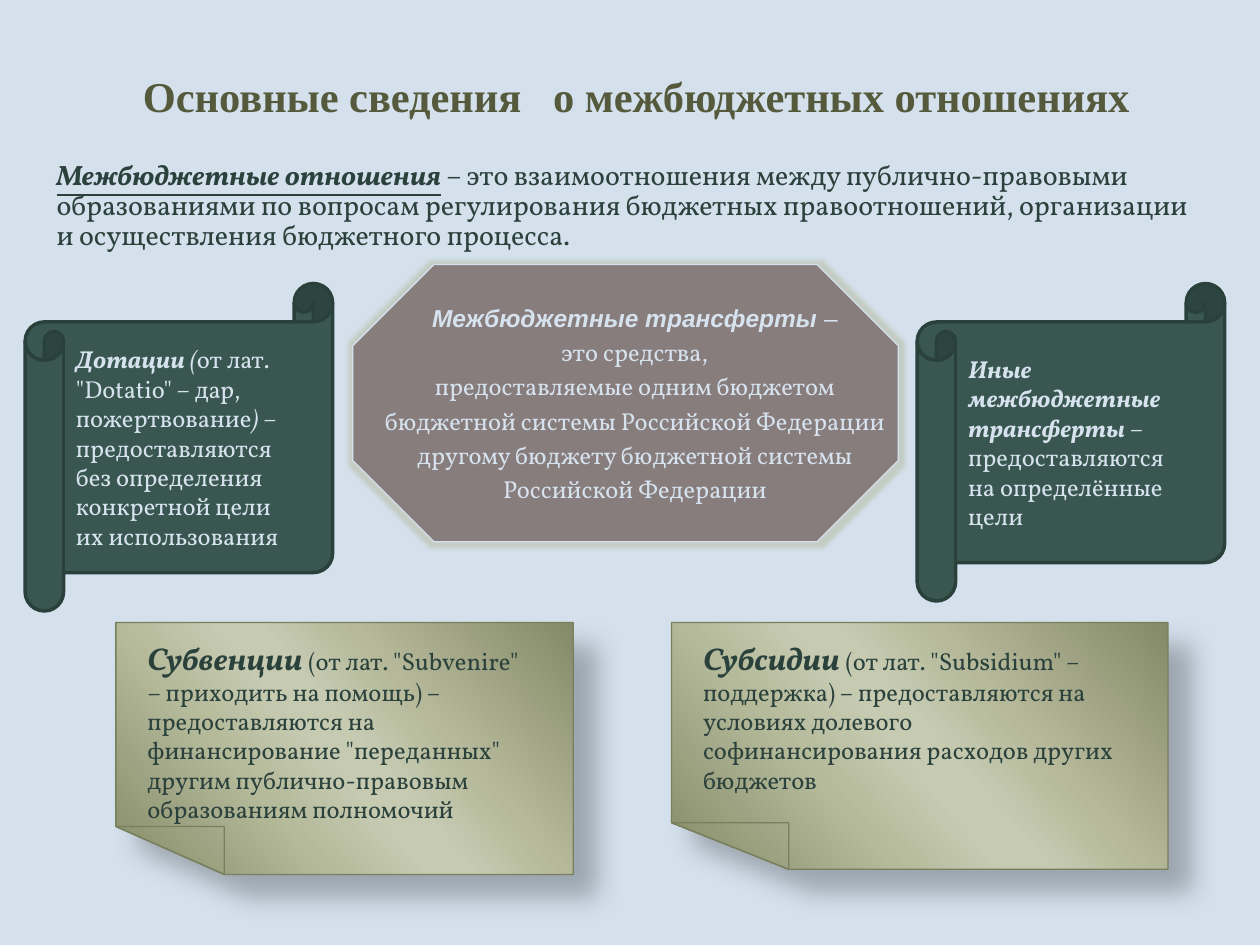
from lxml import etree
from pptx import Presentation
from pptx.dml.color import RGBColor
from pptx.enum.shapes import MSO_SHAPE
from pptx.enum.text import MSO_ANCHOR, PP_ALIGN
from pptx.oxml import parse_xml
from pptx.oxml.ns import nsdecls, qn
from pptx.util import Inches, Pt

OCTAGON = MSO_SHAPE.OCTAGON
SCROLL = MSO_SHAPE.HORIZONTAL_SCROLL
MIDDLE, TOP = MSO_ANCHOR.MIDDLE, MSO_ANCHOR.TOP
CENTER, LEFT = PP_ALIGN.CENTER, PP_ALIGN.LEFT

SKY = RGBColor(0xD4, 0xE1, 0xED)
PALE = RGBColor(0xD6, 0xE2, 0xEE)
OLIVE = RGBColor(0x56, 0x5A, 0x3C)
INK = RGBColor(0x2B, 0x41, 0x3C)
TAUPE = RGBColor(0x88, 0x7D, 0x7D)
GREEN = RGBColor(0x39, 0x57, 0x50)
DARK_GREEN = RGBColor(0x2A, 0x40, 0x3B)
NOTE_EDGE = RGBColor(0x79, 0x7E, 0x5C)
NOTE_STOPS = [(0, "848967"), (33, "B5B99A"), (47, "C6CAB1"),
              (53, "C6CAB1"), (68, "B5BA9B"), (100, "848967")]

GLOW = (f'<a:glow {nsdecls("a")} rad="63500"><a:srgbClr val="B5B99A">'
        '<a:alpha val="50000"/></a:srgbClr></a:glow>')
SHADOW = (f'<a:outerShdw {nsdecls("a")} blurRad="190500" dist="228600" dir="2700000" '
          'algn="tl" rotWithShape="0"><a:srgbClr val="000000">'
          '<a:alpha val="26000"/></a:srgbClr></a:outerShdw>')


class SlideBuilder:
    font, size = "Vollkorn", 14

    def __init__(self, slide):
        self.s = slide
        fill = slide.background.fill
        fill.solid()
        fill.fore_color.rgb = SKY

    def add_runs(self, sp, paragraphs, color, anchor=TOP, align=LEFT, wrap=True):
        """Each paragraph lists runs: (text, style letters out of b, i, u[, size[, font]])."""
        tf = sp.text_frame
        tf.word_wrap = wrap
        tf.vertical_anchor = anchor
        for i, runs in enumerate(paragraphs):
            p = tf.add_paragraph() if i else tf.paragraphs[0]
            p.alignment = align
            for text, style, *rest in runs:
                size, font = (*rest, *(self.size, self.font)[len(rest):])
                r = p.add_run()
                r.text = text
                r.font.size, r.font.name = Pt(size), font
                r.font.bold, r.font.italic = "b" in style, "i" in style
                r.font.underline = "u" in style
                r.font.color.rgb = color
        return tf

    def text(self, x, y, w, h, paragraphs, color, **layout):
        sp = self.s.shapes.add_textbox(Inches(x), Inches(y), Inches(w), Inches(h))
        return self.add_runs(sp, paragraphs, color, **layout)

    def outline(self, sp, color, width, effect=None):
        sp.line.color.rgb = color
        sp.line.width = Pt(width)
        sp.shadow.inherit = False
        if effect:
            sp._element.spPr.find(qn("a:effectLst")).append(parse_xml(effect))

    def shape(self, kind, x, y, w, h, fill, line, width, effect=None):
        sp = self.s.shapes.add_shape(kind, Inches(x), Inches(y), Inches(w), Inches(h))
        sp.fill.solid()
        sp.fill.fore_color.rgb = fill
        self.outline(sp, line, width, effect)
        return sp

    def octagon(self, x, y, w, h, paragraphs):
        sp = self.shape(OCTAGON, x, y, w, h, TAUPE, SKY, 0.75, GLOW)
        sp.adjustments[0] = 0.293
        tf = self.add_runs(sp, paragraphs, PALE, MIDDLE, CENTER, wrap=False)
        for p in tf.paragraphs:
            p.space_before = Pt(0.2 * self.size)
            pPr = p._p.get_or_add_pPr()
            pPr.set("marL", str(Inches(0.6)))
            pPr.set("indent", str(Inches(-0.45)))

    def scroll(self, x, y, w, h, runs):
        sp = self.shape(SCROLL, x, y, w, h, GREEN, DARK_GREEN, 2)
        self.add_runs(sp, [runs], PALE, MIDDLE)

    def polygon(self, points):
        start, *rest = [(Inches(x), Inches(y)) for x, y in points]
        builder = self.s.shapes.build_freeform(*start)
        builder.add_line_segments(rest, close=True)
        return builder.convert_to_shape()

    def note(self, x, y, w, h, fold_w, fold_h, runs):
        """Sheet with its lower left corner folded up."""
        right, bottom = x + w, y + h
        tip, foot = (x, bottom - fold_h), (x + fold_w, bottom)
        sheet = self.polygon([(x, y), (right, y), (right, bottom), foot, tip])
        sheet.fill.gradient()
        sheet.fill.gradient_angle = 360 - 139
        stops = sheet._element.spPr.find(qn("a:gradFill")).find(qn("a:gsLst"))
        for old in list(stops):
            stops.remove(old)
        for pos, color in NOTE_STOPS:
            gs = etree.SubElement(stops, qn("a:gs"), pos=str(pos * 1000))
            etree.SubElement(gs, qn("a:srgbClr"), val=color)
        self.outline(sheet, NOTE_EDGE, 0.75, SHADOW)
        tf = self.add_runs(sheet, [runs], INK)
        tf.margin_left, tf.margin_right = Inches(0.25), Inches(0.35)
        tf.margin_top = Inches(0.13)

        fold = self.polygon([tip, (x + fold_w, bottom - fold_h), foot])
        fold.fill.background()
        self.outline(fold, NOTE_EDGE, 0.75)


def main():
    prs = Presentation()
    prs.slide_width, prs.slide_height = Inches(10), Inches(7.5)
    b = SlideBuilder(prs.slides.add_slide(prs.slide_layouts[6]))

    b.text(0.24, 0.56, 9.62, 0.39,
           [[("Основные сведения   о межбюджетных отношениях", "b", 24.3, "Times New Roman")]],
           OLIVE, anchor=MIDDLE, align=CENTER)

    b.octagon(2.8, 2.1, 4.33, 2.2, [
        [("Межбюджетные трансферты", "bi", 14, "Arial"), (" –", "", 14, "Arial")],
        [("это средства,", "")],
        [("предоставляемые одним бюджетом", "")],
        [("бюджетной системы Российской Федерации", "")],
        [("другому бюджету бюджетной системы", "")],
        [("Российской Федерации", "")],
    ])

    b.note(0.92, 4.94, 3.63, 2, 0.86, 0.38, [
        ("Субвенции ", "bi", 18),
        ("(от лат. \"Subvenire\" – приходить на помощь) – предоставляются на "
         "финансирование \"переданных\" другим публично-правовым образованиям "
         "полномочий", ""),
    ])

    intro = b.text(0.35, 1.23, 9.29, 0.83, [[
        ("Межбюджетные отношения", "biu", 16),
        (" – это взаимоотношения между публично-правовыми образованиями по вопросам "
         "регулирования бюджетных правоотношений, организации и осуществления "
         "бюджетного процесса.", "", 16),
    ]], INK)
    intro.paragraphs[0].line_spacing = 0.9

    b.scroll(0.2, 2.25, 2.44, 2.6, [
        ("Дотации", "bi"),
        (" (", "i"),
        ("от лат. \"Dotatio\" – дар, пожертвование", ""),
        (") – ", "i"),
        ("предоставляются без определения конкретной цели их использования", ""),
    ])
    b.scroll(7.28, 2.25, 2.44, 2.52, [
        ("Иные межбюджетные трансферты", "bi"),
        (" – предоставляются на определённые цели", ""),
    ])

    b.note(5.33, 4.94, 3.94, 1.96, 0.93, 0.37, [
        ("Субсидии ", "bi", 18),
        ("(от лат. \"Subsidium\" – поддержка) – предоставляются на условиях долевого "
         "софинансирования расходов других бюджетов", ""),
    ])

    prs.save("out.pptx")


if __name__ == "__main__":
    main()
